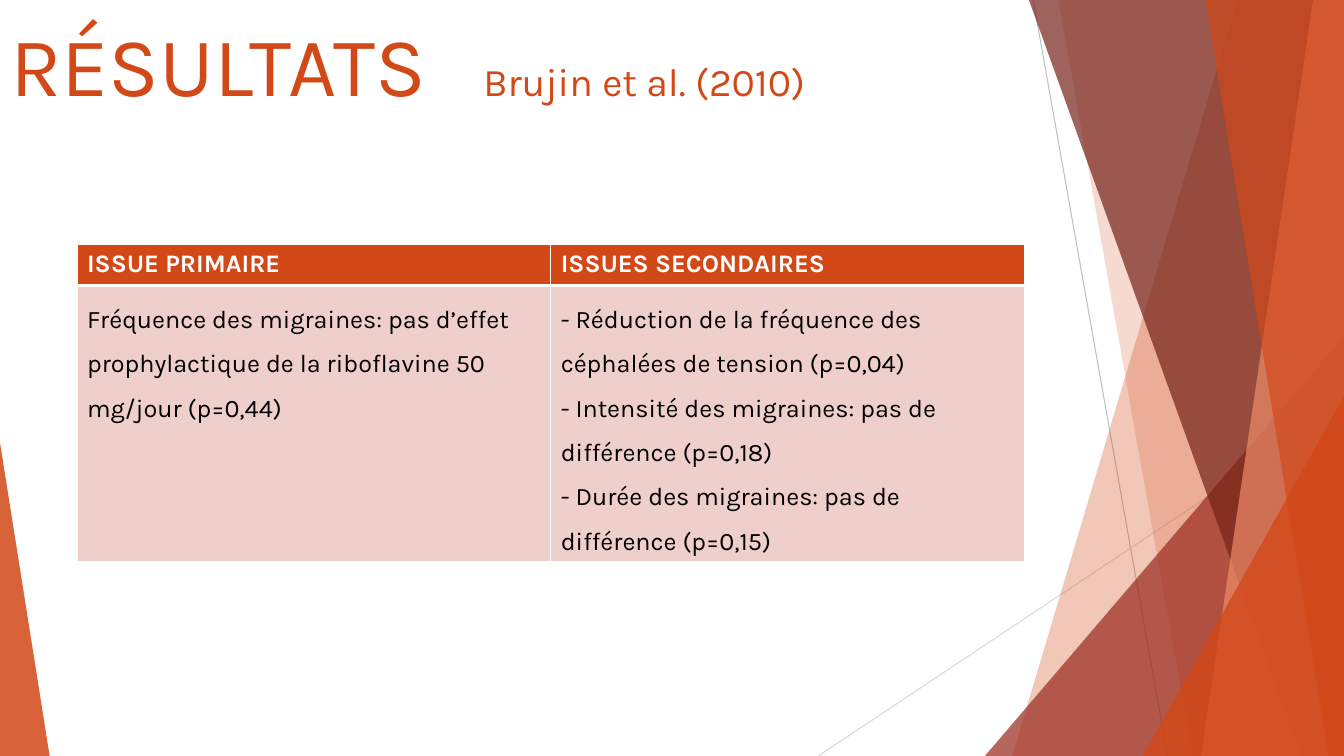
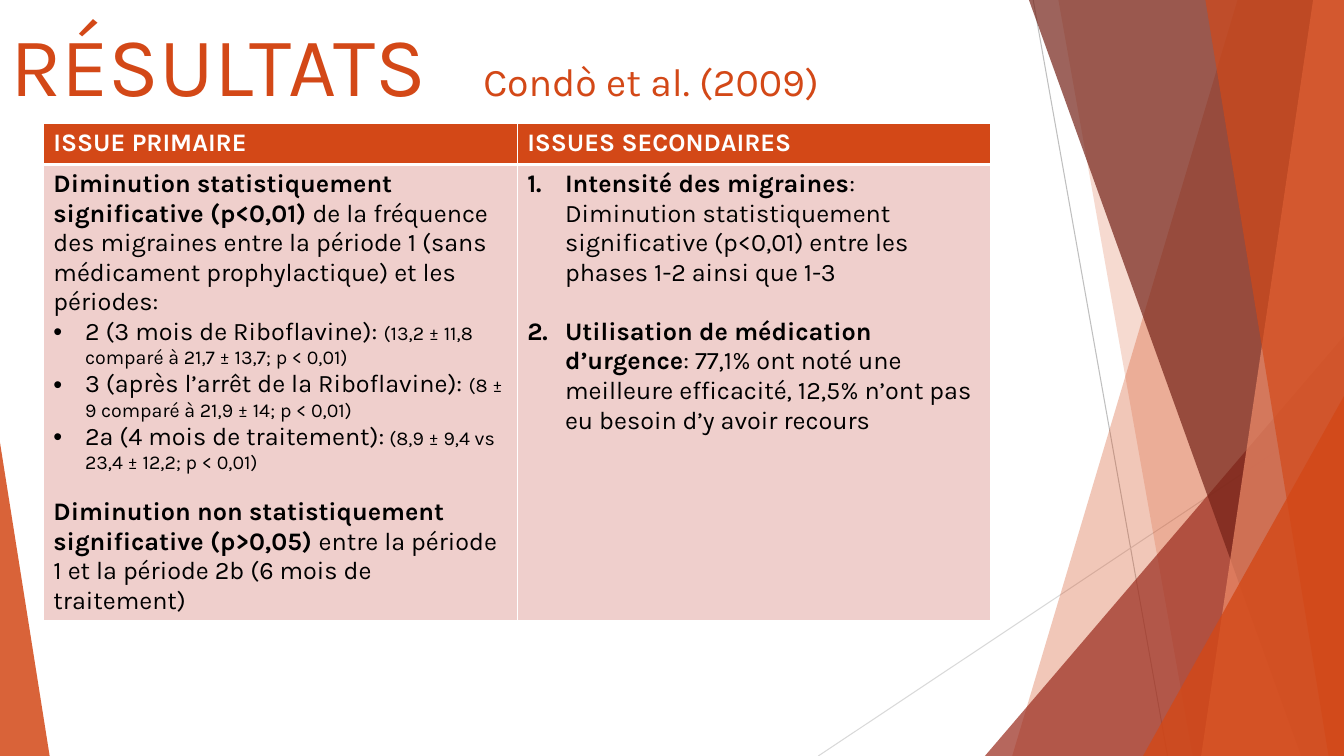
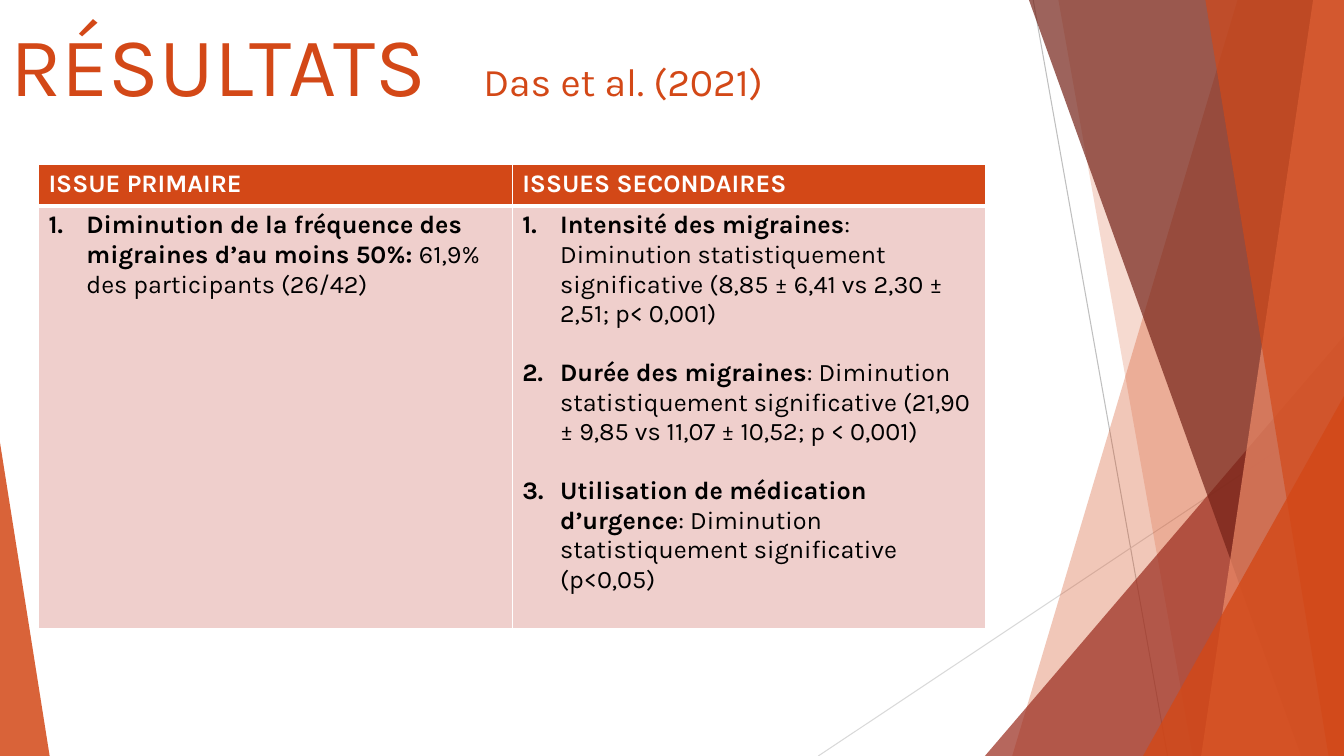
"""Build three result slides, each with a two-column table of outcomes."""

import dataclasses

import lxml.etree
import pptx
import pptx.dml.color
import pptx.enum.shapes
import pptx.enum.text
import pptx.oxml.ns
import pptx.util

Pt = pptx.util.Pt
RGB = pptx.dml.color.RGBColor.from_string


@dataclasses.dataclass(frozen=True)
class Theme:
    font: str = "Karla"
    orange: str = "D34817"
    red: str = "9B2D1F"
    maroon: str = "742217"
    salmon: str = "EF8C6A"
    pink: str = "EFCFCC"
    white: str = "FFFFFF"
    black: str = "000000"
    gray: str = "BFBFBF"
    light_gray: str = "D9D9D9"
    title_size: int = 60
    study_size: int = 28
    body_size: int = 18
    detail_size: int = 14


theme = Theme()
WIDTH, HEIGHT = 960, 540
COLUMN_WIDTH, HEADER_HEIGHT = 338.4, 29.5
HEADERS = ("ISSUE PRIMAIRE", "ISSUES SECONDAIRES")
SMALL_GAP, LARGE_GAP = 16.4, 21


def write(paragraph, text, size=theme.body_size, color=theme.black, bold=False):
    run = paragraph.add_run()
    run.text = text
    run.font.name = theme.font
    run.font.size = Pt(size)
    run.font.bold = bold
    run.font.color.rgb = RGB(color)


def add_xml(parent, tag, **attributes):
    return lxml.etree.SubElement(parent, pptx.oxml.ns.qn(tag), attributes)


presentation = pptx.Presentation()
presentation.slide_width, presentation.slide_height = Pt(WIDTH), Pt(HEIGHT)
layout = presentation.slide_layouts.get_by_name("Title Only")
for placeholder in list(layout.placeholders)[1:]:
    placeholder.element.getparent().remove(placeholder.element)

studies = [
    {
        "name": "Brujin et al. (2010)",
        "left": 55, "top": 174.5, "body_height": 197, "line_spacing": 1.5,
        "cells": [
            [{"runs": [("Fréquence des migraines: pas d’effet prophylactique de la riboflavine 50 mg/jour (p=0,44)", {})]}],
            [
                {"runs": [("- Réduction de la fréquence des céphalées de tension (p=0,04)", {})]},
                {"runs": [("- Intensité des migraines: pas de différence (p=0,18)", {})]},
                {"runs": [("- Durée des migraines: pas de différence (p=0,15)", {})]},
            ],
        ],
    },
    {
        "name": "Condò et al. (2009)",
        "left": 31, "top": 88, "body_height": 326, "line_spacing": 1,
        "cells": [
            [
                {"runs": [
                    ("Diminution statistiquement significative (p<0,01)", {"bold": True}),
                    (" de la fréquence des migraines entre la période 1 (sans médicament prophylactique) et les périodes:", {}),
                ]},
                {"list": "bullet", "runs": [
                    ("2 (3 mois de Riboflavine): ", {}),
                    ("(13,2 ± 11,8 comparé à 21,7 ± 13,7; p < 0,01)", {"size": theme.detail_size}),
                ]},
                {"list": "bullet", "runs": [
                    ("3 (après l’arrêt de la Riboflavine): ", {}),
                    ("(8 ± 9 comparé à 21,9 ± 14; p < 0,01)", {"size": theme.detail_size}),
                ]},
                {"list": "bullet", "runs": [
                    ("2a (4 mois de traitement):", {}),
                    (" (8,9 ± 9,4 vs 23,4 ± 12,2; p < 0,01)", {"size": theme.detail_size}),
                ]},
                {"gap": SMALL_GAP, "runs": [
                    ("Diminution non statistiquement significative (p>0,05) ", {"bold": True}),
                    ("entre la période 1 et la période 2b (6 mois de traitement)", {}),
                ]},
            ],
            [
                {"list": "number", "runs": [
                    ("Intensité des migraines", {"bold": True}),
                    (": Diminution statistiquement significative (p<0,01) entre les phases 1-2 ainsi que 1-3", {}),
                ]},
                {"list": "number", "gap": LARGE_GAP, "runs": [
                    ("Utilisation de médication d’urgence", {"bold": True}),
                    (": 77,1% ont noté une meilleure efficacité, 12,5% n’ont pas eu besoin d’y avoir recours", {}),
                ]},
            ],
        ],
    },
    {
        "name": "Das et al. (2021)",
        "left": 27.5, "top": 117.5, "body_height": 302, "line_spacing": 1,
        "cells": [
            [
                {"list": "number", "runs": [
                    ("Diminution de la fréquence des migraines d’au moins 50%: ", {"bold": True}),
                    ("61,9% des participants (26/42)", {}),
                ]},
            ],
            [
                {"list": "number", "runs": [
                    ("Intensité des migraines", {"bold": True}),
                    (": Diminution statistiquement significative (8,85 ± 6,41 vs 2,30 ± 2,51; p< 0,001)", {}),
                ]},
                {"list": "number", "gap": LARGE_GAP, "runs": [
                    ("Durée des migraines", {"bold": True}),
                    (": Diminution statistiquement significative (21,90 ± 9,85 vs 11,07 ± 10,52; p < 0,001)", {}),
                ]},
                {"list": "number", "gap": LARGE_GAP, "runs": [
                    ("Utilisation de médication d’urgence", {"bold": True}),
                    (": Diminution statistiquement significative (p<0,05)", {}),
                ]},
            ],
        ],
    },
]
slides = [presentation.slides.add_slide(layout) for study in studies]

shapes = slides[0].shapes
decorations = []
for start, end, color in (
    ((738, 0), (834, HEIGHT), theme.gray),
    ((WIDTH, 290), (584.5, HEIGHT), theme.light_gray),
):
    connector = shapes.add_connector(
        pptx.enum.shapes.MSO_CONNECTOR.STRAIGHT, *map(Pt, start + end))
    connector.line.color.rgb = RGB(color)
    connector.line.width = Pt(0.75)
    add_xml(connector.element.spPr, "a:effectLst")
    decorations.append(connector)

facets = [
    ("band", (884, 723), theme.orange, 30),
    ("band", (756, 852), theme.orange, 20),
    ("triangle", (703.5, 240, 256.5, 1), theme.red, 72),
    ("band", (735, 929.5), theme.maroon, 70),
    ("band", (938, 858), theme.salmon, 70),
    ("band", (861, 949), theme.orange, 65),
    ("triangle", (816.5, 283, 143.5, 1), theme.orange, 80),
    ("triangle", (0, 316, 35.5, 0), theme.orange, 85),
]
for kind, geometry, color, opacity in facets:
    if kind == "band":
        top_x, bottom_x = geometry
        builder = shapes.build_freeform(Pt(top_x), 0)
        corners = ((WIDTH, 0), (WIDTH, HEIGHT), (bottom_x, HEIGHT))
        builder.add_line_segments([(Pt(x), Pt(y)) for x, y in corners], close=True)
        facet = builder.convert_to_shape()
    else:
        left, top, width, apex = geometry
        facet = shapes.add_shape(
            pptx.enum.shapes.MSO_SHAPE.ISOSCELES_TRIANGLE,
            Pt(left), Pt(top), Pt(width), Pt(HEIGHT - top))
        facet.adjustments[0] = apex
    facet.shadow.inherit = False
    facet.line.fill.background()
    facet.fill.solid()
    facet.fill.fore_color.rgb = RGB(color)
    color_element = facet.element.spPr.find(".//" + pptx.oxml.ns.qn("a:srgbClr"))
    add_xml(color_element, "a:alpha", val=str(opacity * 1000))
    decorations.append(facet)

for decoration in decorations:
    layout.shapes.element.append(decoration.element)

for slide, study in zip(slides, studies):
    title = slide.shapes.title
    title.left, title.top, title.width, title.height = Pt(0), Pt(0), Pt(677), Pt(104)
    frame = title.text_frame
    frame.word_wrap = True
    frame.auto_size = pptx.enum.text.MSO_AUTO_SIZE.NONE
    frame.vertical_anchor = pptx.enum.text.MSO_ANCHOR.TOP
    frame.margin_top = Pt(9)
    paragraph = frame.paragraphs[0]
    paragraph.alignment = pptx.enum.text.PP_ALIGN.LEFT
    tabs = add_xml(paragraph._p.get_or_add_pPr(), "a:tabLst")
    add_xml(tabs, "a:tab", pos=str(Pt(338)), algn="l")
    write(paragraph, "RÉSULTATS\t", size=theme.title_size, color=theme.orange)
    write(paragraph, study["name"], size=theme.study_size, color=theme.orange)

    table = slide.shapes.add_table(
        2, 2, Pt(study["left"]), Pt(study["top"]), Pt(2 * COLUMN_WIDTH),
        Pt(HEADER_HEIGHT + study["body_height"])).table
    table.horz_banding = False
    table.rows[0].height = Pt(HEADER_HEIGHT)
    table.rows[1].height = Pt(study["body_height"])
    for column in table.columns:
        column.width = Pt(COLUMN_WIDTH)

    for row in range(2):
        for column in range(2):
            cell = table.cell(row, column)
            properties = cell._tc.get_or_add_tcPr()
            header_edge = "a:lnT" if row else "a:lnB"
            for edge in ("a:lnL", "a:lnR", "a:lnT", "a:lnB"):
                border = add_xml(properties, edge, w=str(Pt(3 if edge == header_edge else 1)))
                add_xml(add_xml(border, "a:solidFill"), "a:srgbClr", val=theme.white)
            cell.fill.solid()
            cell.fill.fore_color.rgb = RGB(theme.pink if row else theme.orange)

    for column, (header, items) in enumerate(zip(HEADERS, study["cells"])):
        write(table.cell(0, column).text_frame.paragraphs[0], header,
              color=theme.white, bold=True)
        frame = table.cell(1, column).text_frame
        for index, item in enumerate(items):
            paragraph = frame.add_paragraph() if index else frame.paragraphs[0]
            paragraph.line_spacing = study["line_spacing"]
            paragraph.space_before = Pt(item.get("gap", 0))
            if "list" in item:
                properties = paragraph._p.get_or_add_pPr()
                indent = Pt(22.5 if item["list"] == "bullet" else 27)
                properties.set("marL", str(indent))
                properties.set("indent", str(-indent))
                if item["list"] == "bullet":
                    add_xml(properties, "a:buFont", typeface="Arial")
                    add_xml(properties, "a:buChar", char="•")
                else:
                    add_xml(properties, "a:buAutoNum", type="arabicPeriod")
            for text, text_format in item["runs"]:
                write(paragraph, text, **text_format)

presentation.save("out.pptx")
